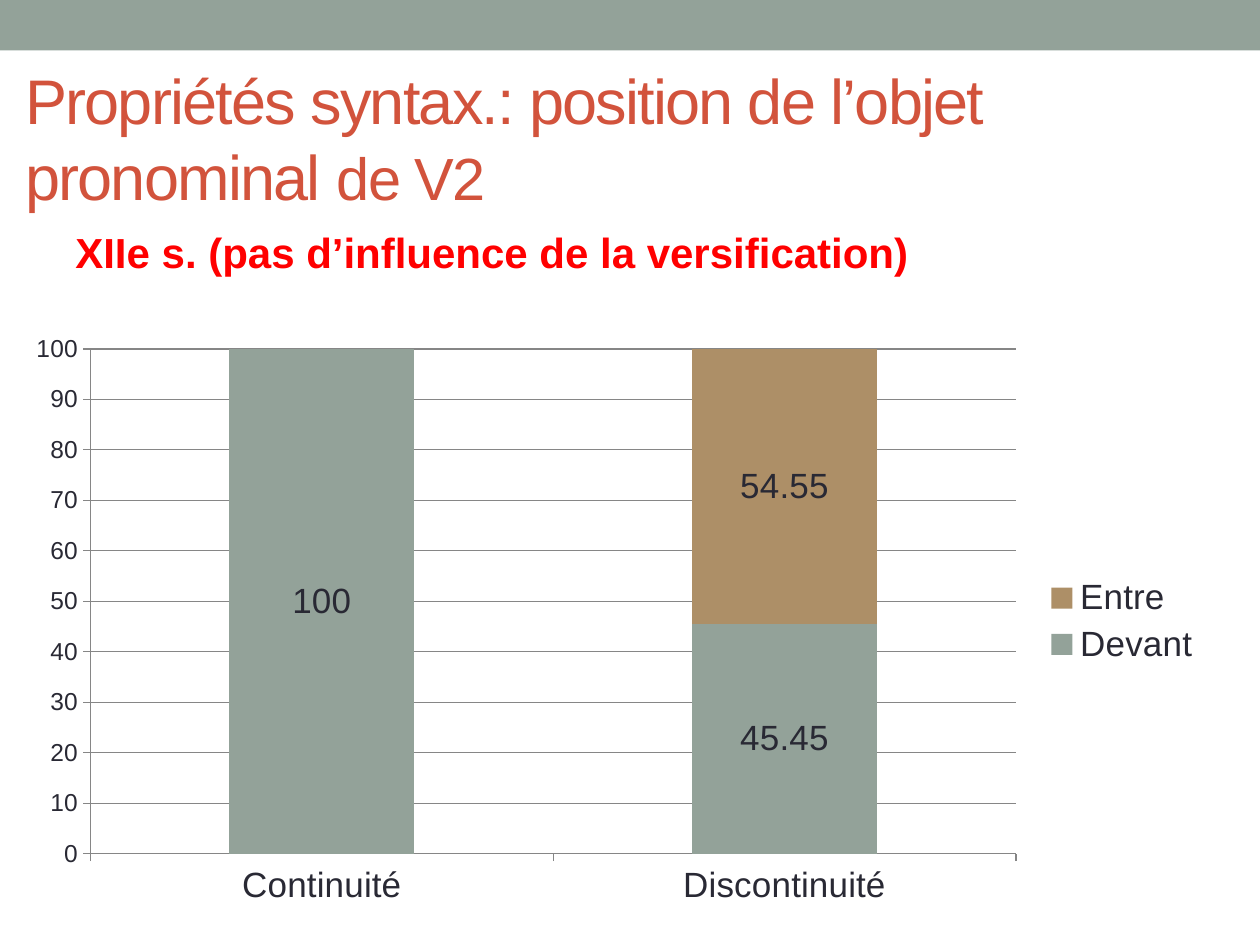
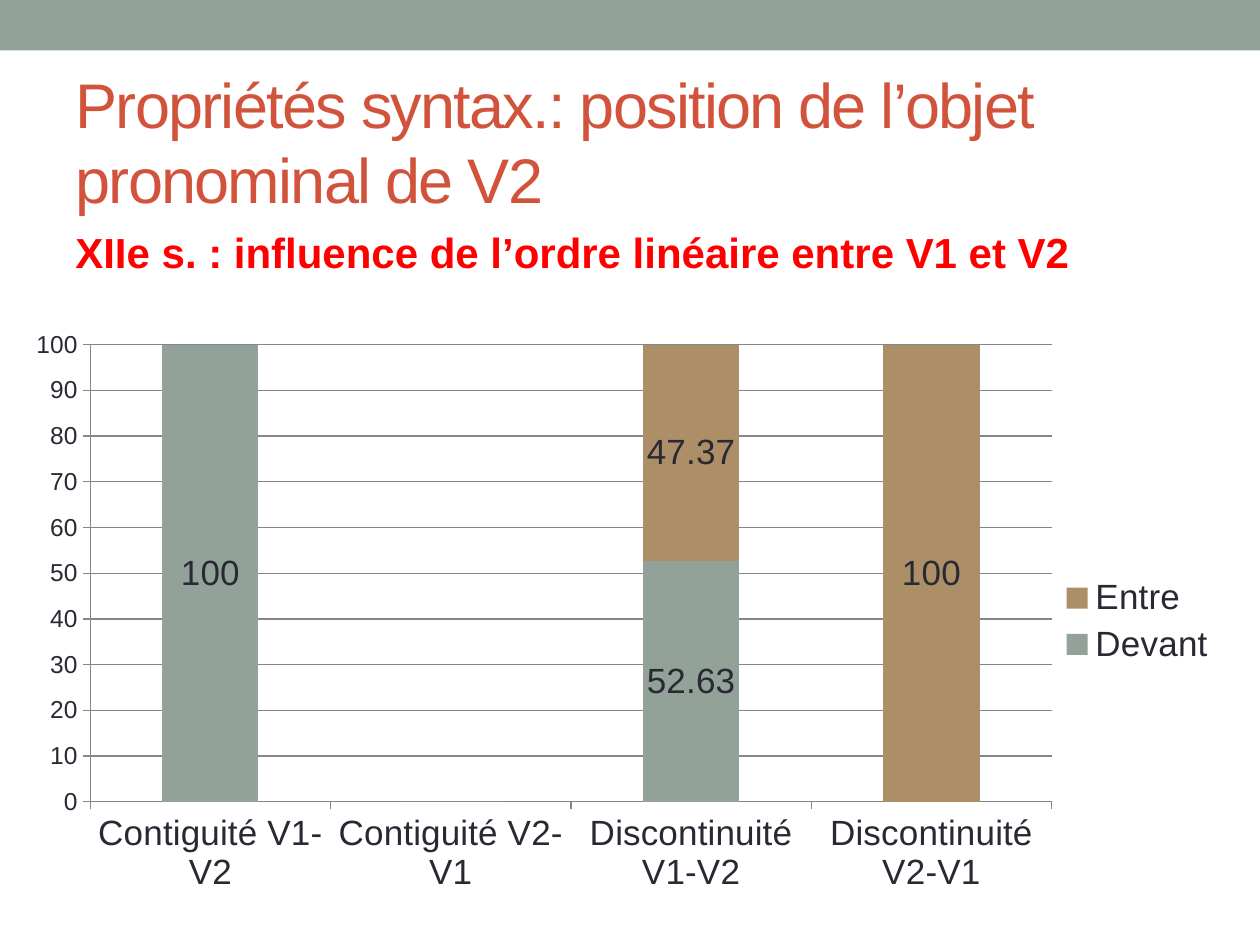
from lxml import etree
from pptx import Presentation
from pptx.chart.data import CategoryChartData
from pptx.dml.color import RGBColor
from pptx.enum.chart import XL_CHART_TYPE, XL_LABEL_POSITION, XL_LEGEND_POSITION, XL_TICK_MARK
from pptx.enum.shapes import MSO_SHAPE
from pptx.enum.text import MSO_ANCHOR, MSO_AUTO_SIZE, PP_ALIGN
from pptx.oxml import parse_xml
from pptx.oxml.ns import nsdecls
from pptx.util import Cm, Pt

STACKED = XL_CHART_TYPE.COLUMN_STACKED
CENTER = XL_LABEL_POSITION.CENTER
RIGHT = XL_LEGEND_POSITION.RIGHT
OUTSIDE = XL_TICK_MARK.OUTSIDE

FONT = "Arial"
COLORS = {"band": "93A299", "title": "D2533C", "subtitle": "FF0000",
          "text": "292934", "grid": "868686",
          "Devant": "93A299", "Entre": "AD8F67"}

# Boxes are left, top, width, height in cm; plot areas are fractions of the chart.
SUBTITLE_BOX = (1.27, 4.45, 22.86, 1.4)
SLIDES = [
    {"title": [("Propriétés syntax.: position de l’objet pronominal ", 36), ("de V2", 34)],
     "title_box": (0.25, 1.4, 24.87, 2.74),
     "subtitle": "XIIe s. (pas d’influence de la versification)",
     "categories": ["Continuité", "Discontinuité"],
     "series": {"Devant": [100, 45.45], "Entre": [0, 54.55]},
     "chart_box": (0.25, 6.53, 24.23, 11.99),
     "plot": (0.065, 0.042, 0.77, 0.849)},
    {"title": [("Propriétés syntax.: position de l’objet pronominal de V2", 36)],
     "title_box": (1.27, 1.47, 22.86, 2.74),
     "subtitle": "XIIe s. : influence de l’ordre linéaire entre V1 et V2",
     "categories": ["Contiguité V1-V2", "Contiguité V2-V1",
                    "Discontinuité V1-V2", "Discontinuité V2-V1"],
     "series": {"Devant": [100, 0, 52.63, 0], "Entre": [0, 0, 47.37, 100]},
     "chart_box": (0.38, 6.48, 24.41, 12.09),
     "plot": (0.059, 0.039, 0.794, 0.762)},
]


def rgb(name):
    return RGBColor.from_string(COLORS[name])


def cm(box):
    return [Cm(v) for v in box]


def style(font, size, color, bold=False):
    font.name, font.size, font.bold = FONT, Pt(size), bold
    font.color.rgb = rgb(color)


def add_band(s):
    band = s.shapes.add_shape(MSO_SHAPE.RECTANGLE, 0, 0, Cm(25.4), Cm(1.02))
    band.shadow.inherit = False
    band.fill.solid()
    band.fill.fore_color.rgb = rgb("band")
    band.line.fill.background()


def set_title(s, runs, box):
    title = s.shapes.title
    title.left, title.top, title.width, title.height = cm(box)
    tf = title.text_frame
    tf.auto_size = MSO_AUTO_SIZE.NONE
    tf.vertical_anchor = MSO_ANCHOR.MIDDLE
    p = tf.paragraphs[0]
    p.alignment = PP_ALIGN.LEFT
    for text, size in runs:
        r = p.add_run()
        r.text = text
        style(r.font, size, "title")
        r.font._element.set("spc", "-100")


def add_subtitle(s, text):
    tf = s.shapes.add_textbox(*cm(SUBTITLE_BOX)).text_frame
    tf.word_wrap = True
    p = tf.paragraphs[0]
    p.text = text
    style(p.font, 24, "subtitle", bold=True)


def place_plot(chart, plot):
    """Fix the inner plot area at fractions of the chart."""
    area = chart._chartSpace.chart.plotArea
    for old in area.findall("{*}layout"):
        area.remove(old)
    tags = '<c:layoutTarget val="inner"/><c:xMode val="edge"/><c:yMode val="edge"/>'
    tags += "".join(f'<c:{k} val="{v}"/>' for k, v in zip("xywh", plot))
    area.insert(0, parse_xml(f'<c:layout {nsdecls("c")}><c:manualLayout>{tags}'
                             "</c:manualLayout></c:layout>"))


def label_series(series, values):
    """Show the values, leaving out the labels of empty segments."""
    labels = series.data_labels
    labels.show_value = True
    labels.position = CENTER
    style(labels.font, 20, "text")
    zeros = [i for i, v in enumerate(values) if v == 0]
    for place, i in enumerate(zeros):
        label = parse_xml(f'<c:dLbl {nsdecls("c")}/>')
        for tag, val in (("idx", i), ("delete", 1)):
            etree.SubElement(label, label.tag.replace("dLbl", tag), val=str(val))
        labels._element.insert(place, label)


def add_stacked_chart(s, data):
    chart_data = CategoryChartData()
    chart_data.categories = data["categories"]
    for name, values in data["series"].items():
        chart_data.add_series(name, values)
    chart = s.shapes.add_chart(STACKED, *cm(data["chart_box"]), chart_data).chart
    chart.has_title = False
    style(chart.font, 10, "text")
    place_plot(chart, data["plot"])

    chart.has_legend = True
    chart.legend.position = RIGHT
    chart.legend.include_in_layout = False
    style(chart.legend.font, 20, "text")

    for axis, size in ((chart.category_axis, 20), (chart.value_axis, 14)):
        axis.major_tick_mark = OUTSIDE
        axis.format.line.color.rgb = rgb("grid")
        style(axis.tick_labels.font, size, "text")
    values = chart.value_axis
    values.minimum_scale, values.maximum_scale, values.major_unit = 0, 100, 10
    values.has_major_gridlines = True
    values.major_gridlines.format.line.color.rgb = rgb("grid")

    plot = chart.plots[0]
    plot.gap_width, plot.overlap = 150, 100
    plot.vary_by_categories = False
    for series in plot.series:
        series.format.fill.solid()
        series.format.fill.fore_color.rgb = rgb(series.name)
        label_series(series, data["series"][series.name])


def main():
    prs = Presentation()
    prs.slide_width, prs.slide_height = Cm(25.4), Cm(19.05)
    for data in SLIDES:
        s = prs.slides.add_slide(prs.slide_layouts[5])
        add_band(s)
        set_title(s, data["title"], data["title_box"])
        add_subtitle(s, data["subtitle"])
        add_stacked_chart(s, data)
    prs.save("out.pptx")


if __name__ == "__main__":
    main()
